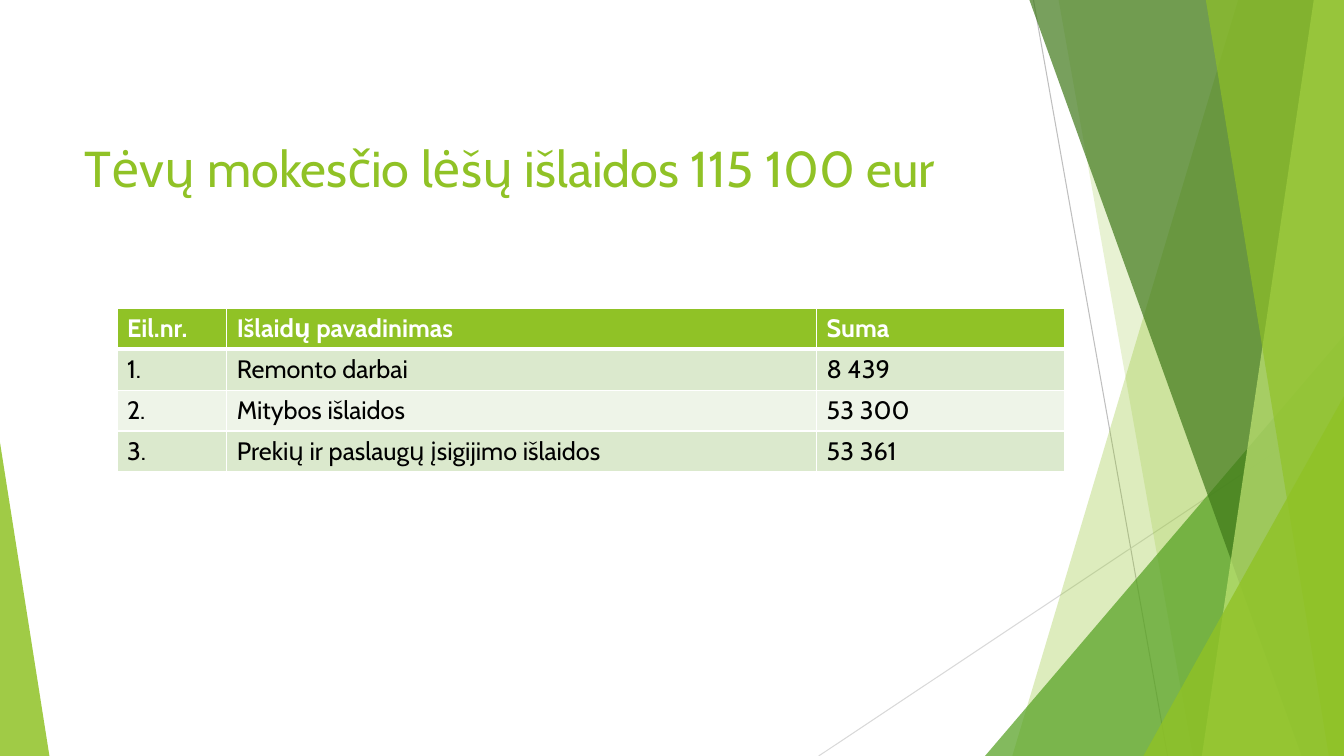
"""Build the slide on spending of parents' fees, with a table and a faceted green edge."""
from lxml.etree import SubElement
from pptx import Presentation
from pptx.dml.color import RGBColor
from pptx.enum.shapes import MSO_CONNECTOR as CONNECTOR, MSO_SHAPE as SHAPE
from pptx.enum.text import MSO_ANCHOR as ANCHOR, PP_ALIGN as ALIGN
from pptx.oxml.ns import qn
from pptx.util import Inches, Pt

GREEN, WHITE, BLACK = "90C226", "FFFFFF", "000000"
WIDTH, HEIGHT = 13.33, 7.5


def paint(target, color, opacity=100):
    """Give a fill or line format a solid colour, with opacity in percent."""
    target.solid()
    target.fore_color.rgb = RGBColor.from_string(color)
    if opacity < 100:
        for node in target._xPr.iter(qn("a:srgbClr")):
            SubElement(node, qn("a:alpha"), val=str(opacity * 1000))


def write(frame, text, size, color, bold=False):
    """Put one left-aligned line of text into a frame."""
    para = frame.paragraphs[0]
    para.alignment = ALIGN.LEFT
    span = para.add_run()
    span.text = text
    span.font.name = "Cabin"
    span.font.size = Pt(size)
    span.font.bold = bold
    paint(span.font.fill, color)


deck = Presentation()
deck.slide_width, deck.slide_height = Inches(WIDTH), Inches(HEIGHT)
page = deck.slides.add_slide(deck.slide_layouts[5])

for x1, y1, x2, y2, color in [
    (10.25, 0, 11.58, HEIGHT, "BFBFBF"),
    (WIDTH, 4.03, 8.12, HEIGHT, "D9D9D9"),
]:
    ray = page.shapes.add_connector(
        CONNECTOR.STRAIGHT, Inches(x1), Inches(y1), Inches(x2), Inches(y2))
    ray.line.width = Pt(0.75)
    paint(ray.line.fill, color)
    SubElement(ray.element.spPr, qn("a:effectLst"))

# Bands: x at the top, x at the bottom; triangles: left, top, width, apex
facets = [
    ("band", (12.28, 10.04), GREEN, 30),
    ("band", (10.5, 11.83), GREEN, 20),
    ("triangle", (9.77, 3.33, 3.56, 1), "54A021", 72),
    ("band", (10.21, 12.91), "3F7819", 70),
    ("band", (13.03, 11.92), "C0E474", 70),
    ("band", (11.96, 13.18), GREEN, 65),
    ("triangle", (11.34, 3.93, 1.99, 1), GREEN, 80),
    ("triangle", (0, 4.39, 0.49, 0), GREEN, 85),
]
for kind, place, color, opacity in facets:
    if kind == "band":
        top_x, bottom_x = place
        outline = page.shapes.build_freeform(Inches(top_x), 0)
        outline.add_line_segments([
            (Inches(x), Inches(y))
            for x, y in [(WIDTH, 0), (WIDTH, HEIGHT), (bottom_x, HEIGHT)]])
        facet = outline.convert_to_shape()
    else:
        left, top, width, apex = place
        facet = page.shapes.add_shape(
            SHAPE.ISOSCELES_TRIANGLE, Inches(left), Inches(top),
            Inches(width), Inches(HEIGHT - top))
        facet.adjustments[0] = apex
    facet.shadow.inherit = False
    facet.line.fill.background()
    paint(facet.fill, color, opacity)

title = page.shapes.title
title.element.getparent().append(title.element)
title.left, title.top = Inches(0.74), Inches(0.67)
title.width, title.height = Inches(9.4), Inches(1.44)
title.text_frame.word_wrap = True
title.text_frame.vertical_anchor = ANCHOR.BOTTOM
title.text_frame.margin_bottom = Inches(0.15)
write(title.text_frame, "Tėvų mokesčio lėšų išlaidos 115 100 eur", 36, GREEN)

expenses = [
    ("Eil.nr.", "Išlaidų pavadinimas", "Suma"),
    ("1.", "Remonto darbai", "8 439"),
    ("2.", "Mitybos išlaidos", "53 300"),
    ("3.", "Prekių ir paslaugų įsigijimo išlaidos", "53 361"),
]
table = page.shapes.add_table(
    len(expenses), 3, Inches(1.16), Inches(3.06), Inches(9.4), Inches(1.62)).table
for column, width in zip(table.columns, (1.09, 5.85, 2.46)):
    column.width = Inches(width)
for row, values in enumerate(expenses):
    header = row == 0
    background = GREEN if header else ("EEF4E8", "DBE9CD")[row % 2]
    for col, value in enumerate(values):
        cell = table.cell(row, col)
        write(cell.text_frame, value, 18, WHITE if header else BLACK, header)
        borders = cell._tc.get_or_add_tcPr()
        for side in "LRTB":
            thick = (header and side == "B") or (row == 1 and side == "T")
            border = SubElement(
                borders, qn(f"a:ln{side}"), w=str(Pt(3 if thick else 1)))
            SubElement(SubElement(border, qn("a:solidFill")), qn("a:srgbClr"), val=WHITE)
        paint(cell.fill, background)

deck.save("out.pptx")
